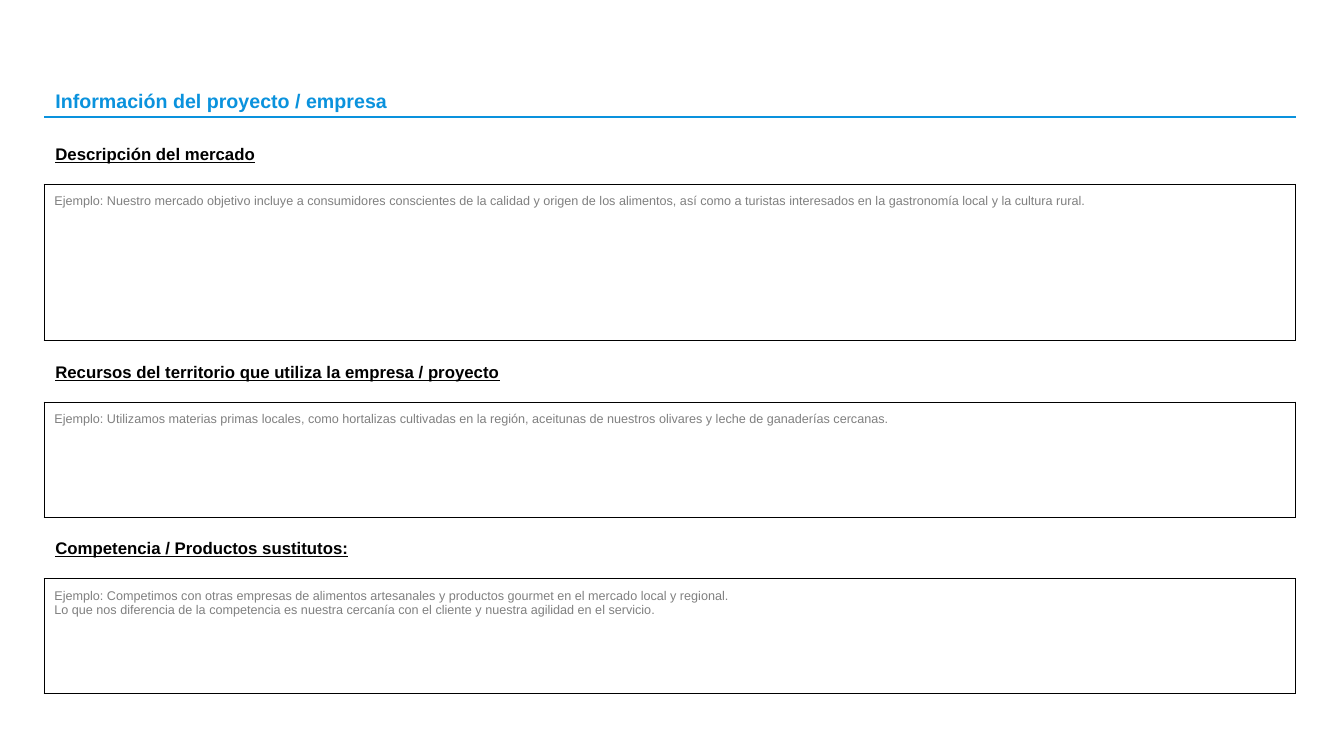
from dataclasses import dataclass

from lxml import etree
from pptx import Presentation
from pptx.dml.color import RGBColor
from pptx.enum.shapes import MSO_CONNECTOR
from pptx.enum.text import MSO_ANCHOR
from pptx.oxml.ns import qn
from pptx.util import Inches, Pt

STRAIGHT = MSO_CONNECTOR.STRAIGHT
MIDDLE = MSO_ANCHOR.MIDDLE
WIDTH, HEIGHT = Inches(13.33), Inches(7.5)


@dataclass(frozen=True)
class Theme:
    font: str = "Arial"
    accent: str = "0A92DD"
    ink: str = "000000"
    hint: str = "808080"
    paper: str = "FFFFFF"
    title_size: float = 14
    heading_size: float = 12
    hint_size: float = 9
    rule_weight: float = 1.5
    border_weight: float = 1


THEME = Theme()

# Percentages of the slide's width or height
LEFT, BOX_WIDTH = 3.3, 93.1
TEXT_LEFT, TEXT_WIDTH, WIDE_TEXT = 3.38, 33.46, 44.49
TITLE_TOP, RULE_TOP, SECTIONS_TOP = 11.47, 15.47, 18.53
TEXT_HEIGHT, HEADING_STEP, SECTION_GAP = 3.6, 5.87, 2.27
TALL_BOX, SHORT_BOX = 20.67, 15.2

SECTIONS = [
    ("Descripción del mercado", TEXT_WIDTH, TALL_BOX, [
        "Ejemplo: Nuestro mercado objetivo incluye a consumidores conscientes de la calidad y "
        "origen de los alimentos, así como a turistas interesados en la gastronomía local y la "
        "cultura rural."]),
    ("Recursos del territorio que utiliza la empresa / proyecto", WIDE_TEXT, SHORT_BOX, [
        "Ejemplo: Utilizamos materias primas locales, como hortalizas cultivadas en la región, "
        "aceitunas de nuestros olivares y leche de ganaderías cercanas."]),
    ("Competencia / Productos sustitutos:", TEXT_WIDTH, SHORT_BOX, [
        "Ejemplo: Competimos con otras empresas de alimentos artesanales y productos gourmet en "
        "el mercado local y regional.",
        "Lo que nos diferencia de la competencia es nuestra cercanía con el cliente y nuestra "
        "agilidad en el servicio."]),
]


def across(percent):
    return round(WIDTH * percent / 100)


def down(percent):
    return round(HEIGHT * percent / 100)


def style(paragraph, size, color, bold=False, underline=False):
    font = paragraph.font
    font.name, font.size = THEME.font, Pt(size)
    font.bold, font.underline = bold, underline
    font.color.rgb = RGBColor.from_string(color)


def add_heading(slide, text, top, width, size, color, underline=False):
    box = slide.shapes.add_textbox(
        across(TEXT_LEFT), down(top), across(width), down(TEXT_HEIGHT))
    frame = box.text_frame
    frame.word_wrap = True
    frame.vertical_anchor = MIDDLE
    frame.text = text
    style(frame.paragraphs[0], size, color, bold=True, underline=underline)


def add_rule(slide):
    rule = slide.shapes.add_connector(
        STRAIGHT, across(LEFT), down(RULE_TOP), across(LEFT + BOX_WIDTH), down(RULE_TOP))
    rule.line.color.rgb = RGBColor.from_string(THEME.accent)
    rule.line.width = Pt(THEME.rule_weight)
    etree.SubElement(rule._element.spPr, qn("a:effectLst"))


def add_borders(cell):
    """Outline a cell; borders must precede the fill in its properties."""
    properties = cell._tc.get_or_add_tcPr()
    for position, side in enumerate(("a:lnL", "a:lnR", "a:lnT", "a:lnB")):
        line = etree.Element(qn(side), w=str(Pt(THEME.border_weight)))
        fill = etree.SubElement(line, qn("a:solidFill"))
        etree.SubElement(fill, qn("a:srgbClr"), val=THEME.ink)
        properties.insert(position, line)


def add_answer_box(slide, hints, top, height):
    """Add a one-cell table holding the example text."""
    table = slide.shapes.add_table(
        1, 1, across(LEFT), down(top), across(BOX_WIDTH), down(height)).table
    table.first_row = table.horz_banding = False
    cell = table.cell(0, 0)
    cell.fill.solid()
    cell.fill.fore_color.rgb = RGBColor.from_string(THEME.paper)
    cell.margin_left = cell.margin_right = Inches(0.1)
    cell.margin_top = cell.margin_bottom = Inches(0.1)
    cell.text_frame.text = "\n".join(hints)
    for paragraph in cell.text_frame.paragraphs:
        style(paragraph, THEME.hint_size, THEME.hint)
    add_borders(cell)


def main():
    presentation = Presentation()
    presentation.slide_width, presentation.slide_height = WIDTH, HEIGHT
    slide = presentation.slides.add_slide(presentation.slide_layouts[6])

    add_heading(slide, "Información del proyecto / empresa", TITLE_TOP, TEXT_WIDTH,
                THEME.title_size, THEME.accent)
    add_rule(slide)

    top = SECTIONS_TOP
    for heading, width, box_height, hints in SECTIONS:
        add_heading(slide, heading, top, width, THEME.heading_size, THEME.ink, underline=True)
        add_answer_box(slide, hints, top + HEADING_STEP, box_height)
        top += HEADING_STEP + box_height + SECTION_GAP

    presentation.save("out.pptx")


if __name__ == "__main__":
    main()
